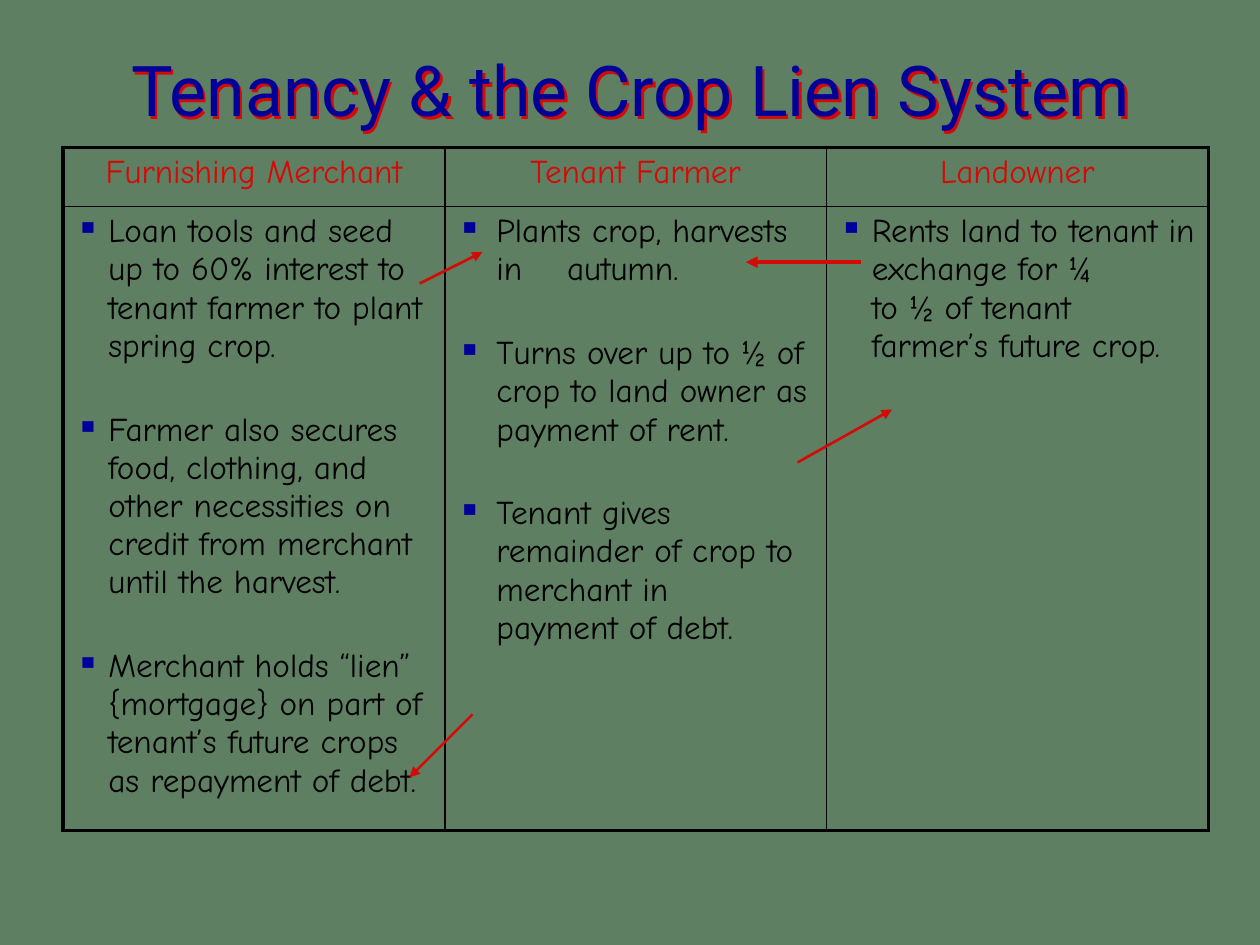
from lxml import etree
from pptx import Presentation, util as u
from pptx.dml.color import RGBColor
from pptx.enum import shapes, text
from pptx.oxml.ns import qn

BACK, BLUE, RED, BLACK = "5F7F63", "000099", "D30A05", "000000"
TITLE = "Tenancy & the Crop Lien System"
COLS = [
    ("Furnishing Merchant", 0.26, [
        "Loan tools and seed up to 60% interest to tenant farmer to plant spring crop.",
        "Farmer also secures\nfood, clothing, and\nother necessities on\n"
        "credit from merchant until the harvest.",
        "Merchant holds “lien” {mortgage} on part of tenant’s future crops "
        "as repayment of debt."]),
    ("Tenant Farmer", 0.31, [
        "Plants crop, harvests in\tautumn.",
        "Turns over up to ½ of crop to land owner as payment of rent.",
        "Tenant gives remainder of crop to merchant in\npayment of debt."]),
    ("Landowner", 0.26, [
        "Rents land to tenant in exchange for ¼\nto ½ of tenant farmer’s future crop."]),
]
ROWS = [0.47, 4.95]
WIDE = 3.03
ARROWS = [  # from, to, line width
    ((3.33, 2.25), (3.83, 2), 1.5),
    ((6.33, 3.67), (7.08, 3.25), 1.5),
    ((6.83, 2.08), (5.92, 2.08), 2.25),
    ((3.75, 5.67), (3.25, 6.17), 1.5),
]


def color(code):
    return RGBColor.from_string(code)


def add(parent, tag, **attrs):
    return etree.SubElement(parent, qn("a:" + tag),
                            {key: str(val) for key, val in attrs.items()})


def style(para, font, size, code):
    for run in para.runs:
        run.font.name, run.font.size = font, u.Pt(size)
        run.font.color.rgb = color(code)


def bullet(para, indent):
    props = para._p.get_or_add_pPr()
    step = u.Inches(indent)
    props.set("marL", str(step))
    props.set("indent", str(-step))
    add(add(props, "buClr"), "srgbClr", val=BLUE)
    add(props, "buChar", char="▪")
    if "\t" in para.text:
        add(add(props, "tabLst"), "tab", pos=u.Inches(0.87), algn="l")


def border(cell, row, col):
    """Thick lines on the table's outside, thin ones within."""
    outer = {"L": col == 0, "R": col == len(COLS) - 1,
             "T": row == 0, "B": row == len(ROWS) - 1}
    props = cell._tc.get_or_add_tcPr()
    for side, thick in outer.items():
        line = add(props, "ln" + side, w=u.Pt(2.25 if thick else 1))
        add(add(line, "solidFill"), "srgbClr", val=BLACK)
    cell.fill.background()


deck = Presentation()
deck.slide_width, deck.slide_height = u.Inches(10), u.Inches(7.5)
slide = deck.slides.add_slide(deck.slide_layouts[6])
slide.background.fill.solid()
slide.background.fill.fore_color.rgb = color(BACK)

# Title with a red shadow
box = slide.shapes.add_textbox(*map(u.Inches, (0.42, 0.28, 9.17, 0.77)))
frame = box.text_frame
frame.word_wrap = True
frame.margin_top, frame.margin_bottom = u.Inches(0.09), u.Inches(0.03)
frame.text = TITLE
head = frame.paragraphs[0]
head.alignment = text.PP_ALIGN.CENTER
style(head, "Roboto", 40, BLUE)
shade = add(add(box._element.spPr, "effectLst"), "outerShdw",
            dist=u.Pt(2), dir=45 * 60000, algn="ctr", rotWithShape=0)
add(shade, "srgbClr", val=RED)

# Table
grid = slide.shapes.add_table(
    len(ROWS), len(COLS), u.Inches(0.5), u.Inches(1.17),
    u.Inches(WIDE * len(COLS)), u.Inches(sum(ROWS))).table
grid.first_row = grid.horz_banding = False
for row, tall in zip(grid.rows, ROWS):
    row.height = u.Inches(tall)

for col, (name, indent, points) in enumerate(COLS):
    grid.columns[col].width = u.Inches(WIDE)
    top, body = grid.cell(0, col), grid.cell(1, col)
    border(top, 0, col)
    border(body, 1, col)
    top.text_frame.text = name
    para = top.text_frame.paragraphs[0]
    para.alignment = text.PP_ALIGN.CENTER
    style(para, "Comic Neue", 19, RED)
    for num, point in enumerate(points):
        frame = body.text_frame
        para = frame.add_paragraph() if num else frame.paragraphs[0]
        para.text = point
        bullet(para, indent)
        if num:
            para.space_before = u.Pt(26)
        style(para, "Comic Neue", 19, BLACK)

# Arrows between the columns
for start, end, width in ARROWS:
    arrow = slide.shapes.add_connector(
        shapes.MSO_CONNECTOR.STRAIGHT, *map(u.Inches, start + end))
    arrow.line.color.rgb = color(RED)
    arrow.line.width = u.Pt(width)
    add(arrow.line._get_or_add_ln(), "tailEnd", type="triangle")
    add(arrow._element.spPr, "effectLst")

deck.save("out.pptx")
